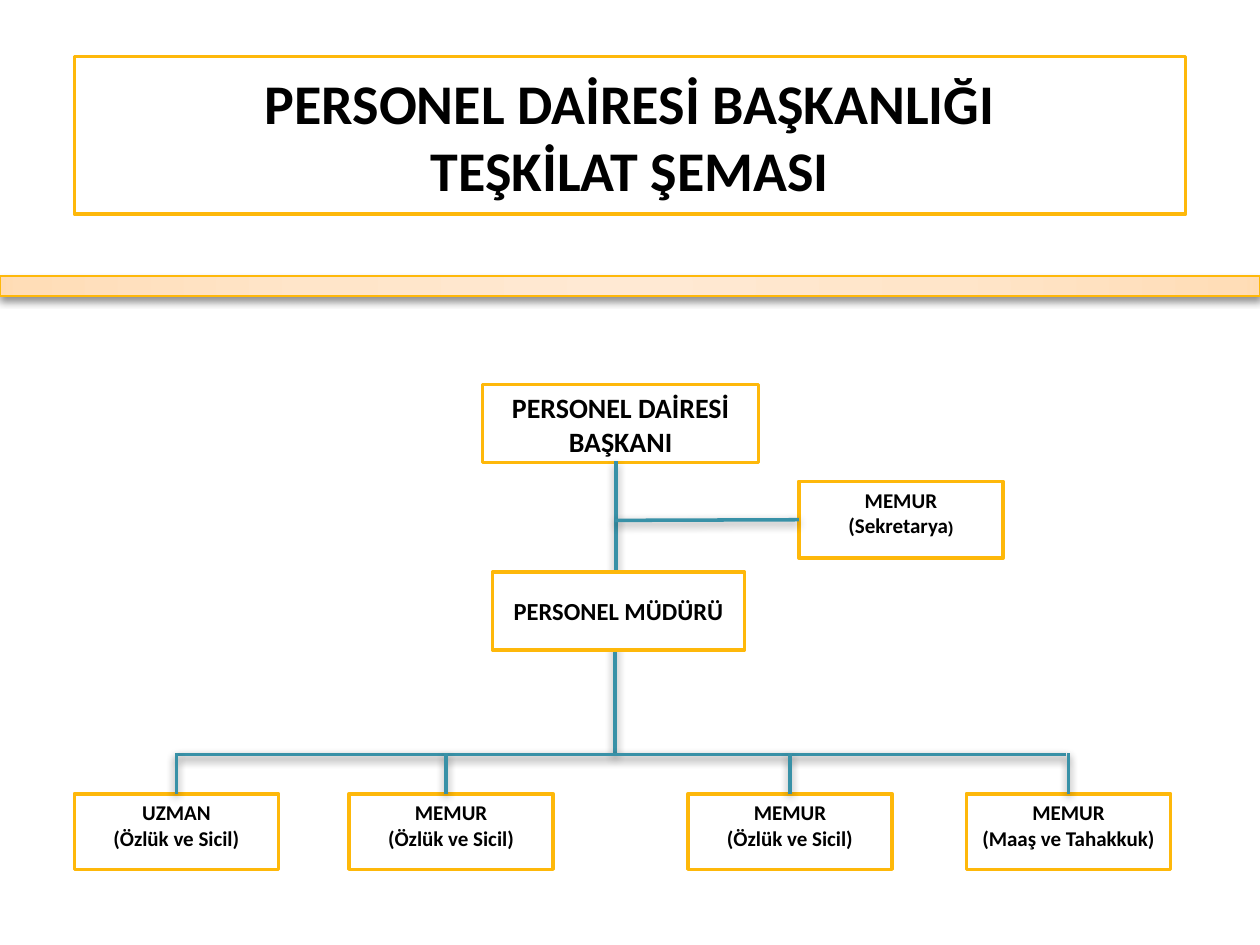
from pptx import Presentation
from pptx.dml.color import RGBColor
from pptx.enum.shapes import MSO_CONNECTOR, MSO_SHAPE
from pptx.enum.text import MSO_ANCHOR, MSO_AUTO_SIZE, PP_ALIGN
from pptx.oxml import parse_xml
from pptx.oxml.ns import nsdecls
from pptx.util import Inches, Pt

RECT = MSO_SHAPE.RECTANGLE
STRAIGHT = MSO_CONNECTOR.STRAIGHT
TOP, MIDDLE = MSO_ANCHOR.TOP, MSO_ANCHOR.MIDDLE
CENTER = PP_ALIGN.CENTER
NO_AUTOFIT = MSO_AUTO_SIZE.NONE
SIDE_TOP, SIDE_LEFT = 0, 1

GOLD, TEAL, WHITE, BLACK = "FEB80A", "3891A7", "FFFFFF", "000000"
BAR_STOPS = [(0, "FFE9D3"), (50, "FFE5C9"), (97, "FFDDB7"), (100, "FFDBB2")]
BOX_W, BOX_H = 1.62, 0.6
STAFF_Y, BUS_Y = 6.3, 5.99
TRUNK_X = 4.88


def color(value):
    return RGBColor.from_string(value)


def set_line(shape, value, width):
    shape.line.color.rgb = color(value)
    shape.line.width = Pt(width)


def add_shadow(shape):
    shape._element.spPr.append(parse_xml(
        f'<a:effectLst {nsdecls("a")}><a:outerShdw blurRad="{Pt(5)}" dist="{Pt(2)}" '
        'dir="5400000" rotWithShape="0"><a:srgbClr val="000000">'
        '<a:alpha val="43000"/></a:srgbClr></a:outerShdw></a:effectLst>'))


def write(shape, lines, size, anchor):
    tf = shape.text_frame
    tf.word_wrap = True
    tf.auto_size = NO_AUTOFIT
    tf.vertical_anchor = anchor
    tf.text = "\n".join(lines)
    for p in tf.paragraphs:
        p.alignment = CENTER
        p.font.name = "Calibri"
        p.font.size = Pt(size)
        p.font.bold = True
        p.font.color.rgb = color(BLACK)


def outline(shape):
    shape.fill.solid()
    shape.fill.fore_color.rgb = color(WHITE)
    set_line(shape, GOLD, 2)


def add_title(s, lines):
    title = s.shapes.title
    title.left, title.top = Inches(0.59), Inches(0.45)
    title.width, title.height = Inches(8.82), Inches(1.25)
    outline(title)
    write(title, lines, 32, MIDDLE)


def add_bar(s):
    bar = s.shapes.add_shape(RECT, 0, Inches(2.19), Inches(10), Inches(0.16))
    stops = "".join(f'<a:gs pos="{pos * 1000}"><a:srgbClr val="{c}"/></a:gs>'
                    for pos, c in BAR_STOPS)
    bar._element.spPr.append(parse_xml(
        f'<a:gradFill {nsdecls("a")}><a:gsLst>{stops}</a:gsLst><a:path path="circle">'
        '<a:fillToRect l="50000" t="50000" r="50000" b="50000"/></a:path></a:gradFill>'))
    set_line(bar, GOLD, 0.75)
    add_shadow(bar)


def add_box(s, x, y, lines, w=BOX_W, h=BOX_H, size=12, anchor=TOP):
    box = s.shapes.add_shape(RECT, Inches(x), Inches(y), Inches(w), Inches(h))
    box.shadow.inherit = False
    outline(box)
    write(box, lines, size, anchor)
    return box


def add_link(s, x1, y1, x2, y2, target=None, side=SIDE_TOP):
    link = s.shapes.add_connector(STRAIGHT, Inches(x1), Inches(y1), Inches(x2), Inches(y2))
    if target is not None:
        link.end_connect(target, side)
    set_line(link, TEAL, 2)
    add_shadow(link)


def main():
    prs = Presentation()
    prs.slide_width, prs.slide_height = Inches(10), Inches(7.5)
    s = prs.slides.add_slide(prs.slide_layouts[5])

    # Heading and divider
    add_title(s, ["PERSONEL DAİRESİ BAŞKANLIĞI", "TEŞKİLAT ŞEMASI"])
    add_bar(s)

    # Trunk from the head down to the staff line
    add_link(s, TRUNK_X, 4.58, TRUNK_X, BUS_Y)
    add_box(s, 3.83, 3.05, ["PERSONEL DAİRESİ BAŞKANI"], 2.19, 0.62, 16)
    add_link(s, 4.89, 3.66, 4.89, 4.55)
    add_box(s, 3.91, 4.54, ["PERSONEL MÜDÜRÜ"], 2, 0.62, 14, MIDDLE)

    # Secretary branch, with a smaller closing bracket
    secretary = add_box(s, 6.34, 3.82, ["MEMUR", "(Sekretarya"], h=0.61)
    r = secretary.text_frame.paragraphs[1].add_run()
    r.text = ")"
    r.font.name = "Arial"
    r.font.size = Pt(9)
    add_link(s, TRUNK_X, 4.13, 6.34, 4.13, secretary, SIDE_LEFT)

    # Staff row: left edge, role, duty, shift of the drop from the box centre
    staff = [
        (0.59, "UZMAN", "(Özlük ve Sicil)", 0),
        (2.77, "MEMUR", "(Özlük ve Sicil)", -0.04),
        (5.46, "MEMUR", "(Özlük ve Sicil)", 0),
        (7.67, "MEMUR", "(Maaş ve Tahakkuk)", 0),
    ]
    add_link(s, 1.41, BUS_Y, 8.46, BUS_Y)
    for x, role, duty, shift in staff:
        box = add_box(s, x, STAFF_Y, [role, duty])
        drop_x = x + BOX_W / 2 + shift
        add_link(s, drop_x, 5.98, drop_x, STAFF_Y, None if shift else box)

    prs.save("out.pptx")


if __name__ == "__main__":
    main()
